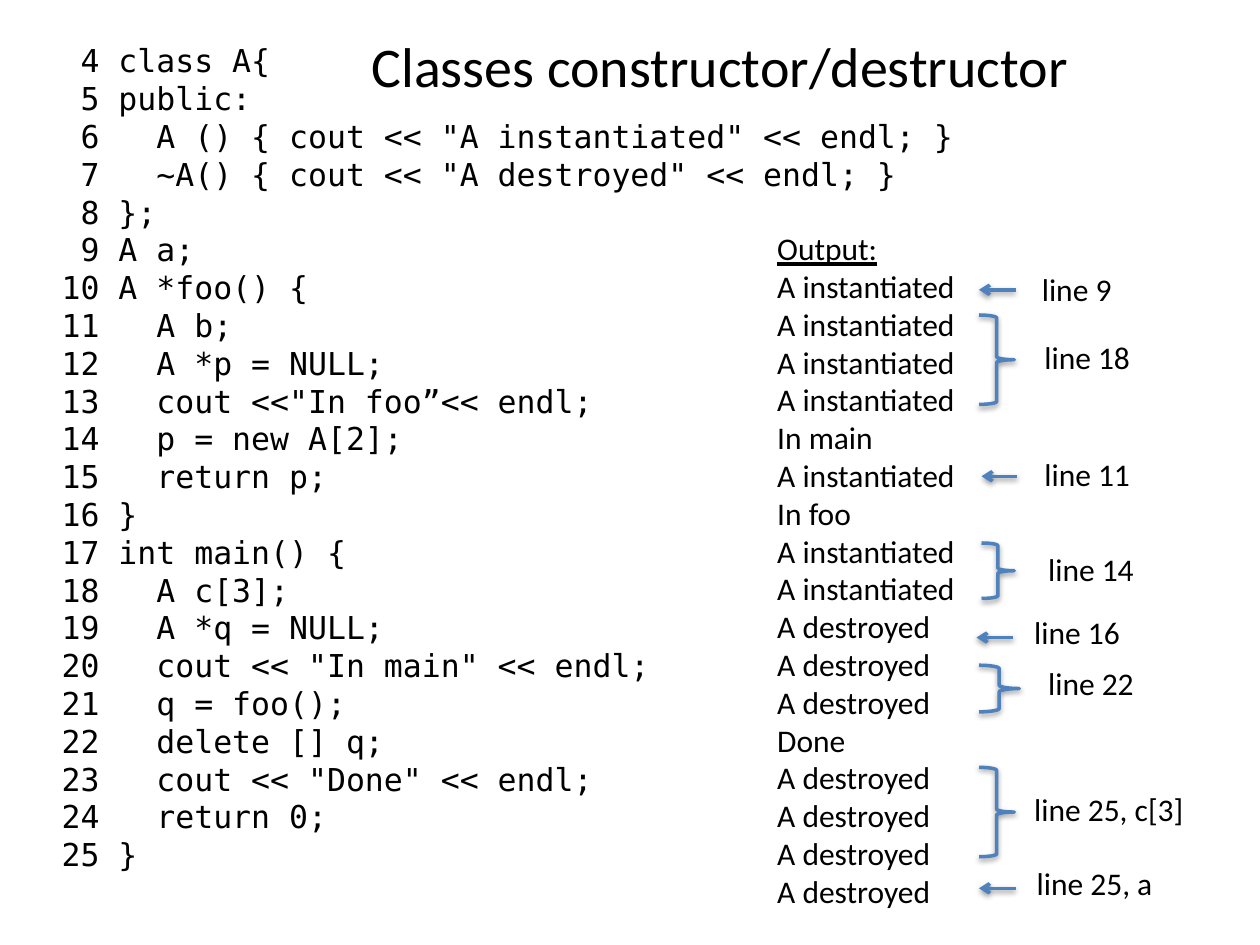
from dataclasses import dataclass

import lxml.etree
import pptx
import pptx.dml.color
import pptx.enum.shapes
import pptx.enum.text
import pptx.oxml.ns
import pptx.util
from pptx.util import Inches


@dataclass(frozen=True)
class Theme:
    text: str = "000000"
    marker: str = "4F81BD"
    body_font: str = "Calibri"
    code_font: str = "DejaVu Sans Mono"
    title_size: int = 32
    body_size: int = 18
    line_width: int = 2


@dataclass(frozen=True)
class Arrow:
    label: str
    left: float
    y: float
    width: float
    label_left: float
    label_top: float
    label_width: float = 0.92


@dataclass(frozen=True)
class Brace:
    label: str
    left: float
    top: float
    width: float
    height: float
    label_left: float
    label_top: float
    label_width: float = 0.92


THEME = Theme()
TITLE = "Classes constructor/destructor"
FIRST_LINE = 4
CODE = """class A{
public:
  A () { cout << "A instantiated" << endl; }
  ~A() { cout << "A destroyed" << endl; }
};
A a;
A *foo() {
  A b;
  A *p = NULL;
  cout <<"In foo”<< endl;
  p = new A[2];
  return p;
}
int main() {
  A c[3];
  A *q = NULL;
  cout << "In main" << endl;
  q = foo();
  delete [] q;
  cout << "Done" << endl;
  return 0;
}""".split("\n")

CREATED, DESTROYED = "A instantiated", "A destroyed"
OUTPUT = (["Output:"] + [CREATED] * 4 + ["In main", CREATED, "In foo"]
          + [CREATED] * 2 + [DESTROYED] * 3 + ["Done"] + [DESTROYED] * 4)

ARROWS = [
    Arrow("line 9", 7.77, 2.3, 0.29, 8.17, 2.09, 0.79),
    Arrow("line 11", 7.79, 3.78, 0.28, 8.19, 3.56),
    Arrow("line 16", 7.75, 5.06, 0.29, 8.11, 4.82),
    Arrow("line 25, a", 7.77, 7.05, 0.29, 8.13, 6.81, 1.2),
]
BRACES = [
    Brace("line 18", 7.77, 2.5, 0.28, 0.71, 8.19, 2.63),
    Brace("line 14", 7.79, 4.31, 0.26, 0.44, 8.22, 4.32),
    Brace("line 22", 7.77, 5.28, 0.32, 0.37, 8.22, 5.22),
    Brace("line 25, c[3]", 7.77, 6.09, 0.28, 0.71, 8.11, 6.22, 1.46),
]


def add_text(shapes, lines: list[str], left: float, top: float, width: float,
             height: float, *, font: str = THEME.body_font,
             size: int = THEME.body_size, wrap: bool = False,
             align=pptx.enum.text.PP_ALIGN.LEFT,
             anchor=pptx.enum.text.MSO_ANCHOR.TOP,
             underline_first: bool = False) -> None:
    frame = shapes.add_textbox(Inches(left), Inches(top),
                               Inches(width), Inches(height)).text_frame
    frame.word_wrap = wrap
    frame.vertical_anchor = anchor
    if not wrap:
        frame.auto_size = pptx.enum.text.MSO_AUTO_SIZE.SHAPE_TO_FIT_TEXT
    for index, line in enumerate(lines):
        paragraph = frame.add_paragraph() if index else frame.paragraphs[0]
        paragraph.alignment = align
        run = paragraph.add_run()
        run.text = line
        run.font.name = font
        run.font.size = pptx.util.Pt(size)
        run.font.color.rgb = pptx.dml.color.RGBColor.from_string(THEME.text)
        if underline_first and index == 0:
            run.font.underline = True


def style_marker(marker) -> None:
    marker.line.color.rgb = pptx.dml.color.RGBColor.from_string(THEME.marker)
    marker.line.width = pptx.util.Pt(THEME.line_width)
    qn = pptx.oxml.ns.qn
    properties = marker.element.find(qn("p:spPr"))
    for existing in properties.findall(qn("a:effectLst")):
        properties.remove(existing)
    effects = lxml.etree.SubElement(properties, qn("a:effectLst"))
    shadow = lxml.etree.SubElement(
        effects, qn("a:outerShdw"), blurRad="40000", dist="20000",
        dir="5400000", rotWithShape="0")
    color = lxml.etree.SubElement(shadow, qn("a:srgbClr"), val="000000")
    lxml.etree.SubElement(color, qn("a:alpha"), val="38000")


def add_label(shapes, mark: Arrow | Brace) -> None:
    add_text(shapes, [mark.label], mark.label_left, mark.label_top,
             mark.label_width, 0.4)


def add_arrow(slide, mark: Arrow) -> None:
    shapes = slide.shapes.add_group_shape().shapes
    arrow = shapes.add_connector(
        pptx.enum.shapes.MSO_CONNECTOR.STRAIGHT,
        Inches(mark.left + mark.width), Inches(mark.y),
        Inches(mark.left), Inches(mark.y))
    style_marker(arrow)
    lxml.etree.SubElement(arrow.line._get_or_add_ln(),
                          pptx.oxml.ns.qn("a:tailEnd"), type="arrow")
    add_label(shapes, mark)


def add_brace(slide, mark: Brace) -> None:
    shapes = slide.shapes.add_group_shape().shapes
    brace = shapes.add_shape(
        pptx.enum.shapes.MSO_SHAPE.RIGHT_BRACE, Inches(mark.left),
        Inches(mark.top), Inches(mark.width), Inches(mark.height))
    brace.fill.background()
    style_marker(brace)
    add_label(shapes, mark)


def main() -> None:
    deck = pptx.Presentation()
    deck.slide_width, deck.slide_height = Inches(10), Inches(7.5)
    slide = deck.slides.add_slide(deck.slide_layouts[6])
    numbered = [f"{number:>3} {code}"
                for number, code in enumerate(CODE, FIRST_LINE)]
    add_text(slide.shapes, numbered, 0.24, 0.28, 7.47, 6.77,
             font=THEME.code_font)
    add_text(slide.shapes, OUTPUT, 6.07, 1.77, 1.72, 5.55,
             underline_first=True)
    for arrow in ARROWS:
        add_arrow(slide, arrow)
    for brace in BRACES:
        add_brace(slide, brace)
    add_text(slide.shapes, [TITLE], 2.29, -0.11, 6.85, 1.25,
             size=THEME.title_size, wrap=True,
             align=pptx.enum.text.PP_ALIGN.CENTER,
             anchor=pptx.enum.text.MSO_ANCHOR.MIDDLE)
    deck.save("out.pptx")


if __name__ == "__main__":
    main()
